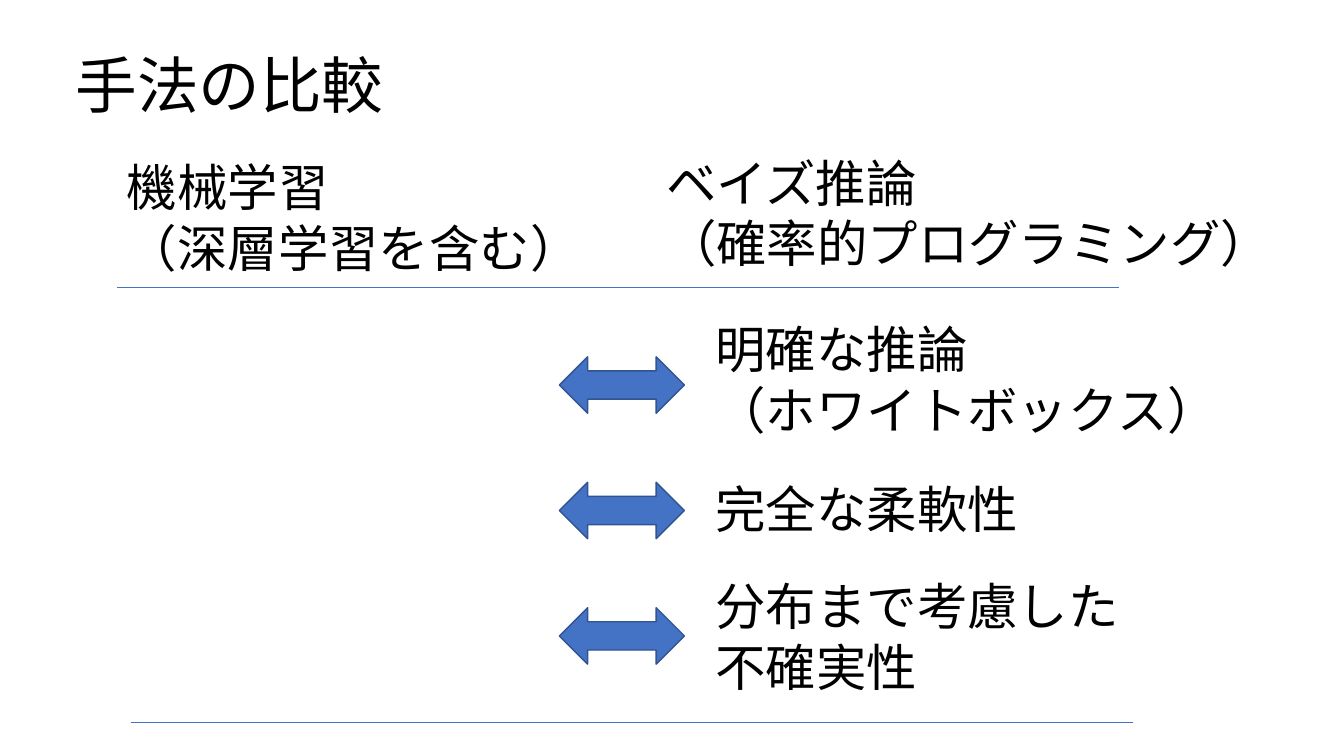
from dataclasses import dataclass

from lxml.etree import SubElement
from pptx import Presentation
from pptx.dml.color import RGBColor
from pptx.enum.shapes import MSO_CONNECTOR as Connector, MSO_SHAPE as Shape
from pptx.enum.text import MSO_ANCHOR as Anchor, MSO_AUTO_SIZE as AutoSize, PP_ALIGN as Align
from pptx.oxml.ns import qn
from pptx.slide import Slide
from pptx.text.text import TextFrame
from pptx.util import Pt

FONT = "Noto Sans CJK JP"
BLACK, BLUE, DARK_BLUE = "000000", "4472C4", "325491"

RULE_WIDTH = 715.7
ARROW_LEFT, ARROW_TOP, ARROW_PITCH = 399.6, 254.9, 89.6
ARROW_WIDTH, ARROW_HEIGHT = 89.3, 40.3
ARROW_COUNT = 3
POINT_LEFT = 504
ONE_LINE, TWO_LINES = 51.1, 94.3


@dataclass(frozen=True)
class Label:
    left: float
    top: float
    width: float
    height: float
    lines: tuple[str, ...]


@dataclass(frozen=True)
class Rule:
    left: float
    top: float


LABELS = (
    Label(83.5, 108, 342, TWO_LINES, ("機械学習", "（深層学習を含む）")),
    Label(468.7, 105.1, 450.7, TWO_LINES, ("ベイズ推論", "（確率的プログラミング）")),
    Label(POINT_LEFT, 223.9, 378, TWO_LINES, ("明確な推論", "（ホワイトボックス）")),
    Label(POINT_LEFT, 337.7, 232.6, ONE_LINE, ("完全な柔軟性",)),
    Label(POINT_LEFT, 407.5, 305.3, TWO_LINES, ("分布まで考慮した", "不確実性")),
)
RULES = (Rule(83.5, 205.2), Rule(93.6, 516.2))


def color(value: str) -> RGBColor:
    return RGBColor.from_string(value)


def write_lines(frame: TextFrame, lines: tuple[str, ...], size: float, spacing: float = 1) -> None:
    for index, line in enumerate(lines):
        para = frame.paragraphs[0] if index == 0 else frame.add_paragraph()
        para.alignment = Align.LEFT
        para.line_spacing = spacing
        span = para.add_run()
        span.text = line
        span.font.size = Pt(size)
        span.font.name = FONT
        span.font.color.rgb = color(BLACK)
        SubElement(span.font._element, qn("a:ea"), typeface=FONT)


def set_title(page: Slide, text: str) -> None:
    title = page.shapes.title
    title.left, title.top = Pt(46.8), Pt(10.8)
    title.width, title.height = Pt(828), Pt(104.4)
    frame = title.text_frame
    frame.word_wrap = True
    frame.auto_size = AutoSize.NONE
    frame.vertical_anchor = Anchor.MIDDLE
    write_lines(frame, (text,), 44, 0.9)


def add_label(page: Slide, label: Label) -> None:
    box = page.shapes.add_textbox(
        Pt(label.left), Pt(label.top), Pt(label.width), Pt(label.height)
    )
    box.text_frame.word_wrap = False
    box.text_frame.auto_size = AutoSize.SHAPE_TO_FIT_TEXT
    write_lines(box.text_frame, label.lines, 36)


def add_rule(page: Slide, rule: Rule) -> None:
    line = page.shapes.add_connector(
        Connector.STRAIGHT,
        Pt(rule.left), Pt(rule.top), Pt(rule.left + RULE_WIDTH), Pt(rule.top),
    )
    line.line.color.rgb = color(BLUE)
    line.line.width = Pt(0.5)
    SubElement(line._element.spPr, qn("a:effectLst"))


def add_arrow(page: Slide, top: float) -> None:
    arrow = page.shapes.add_shape(
        Shape.LEFT_RIGHT_ARROW,
        Pt(ARROW_LEFT), Pt(top), Pt(ARROW_WIDTH), Pt(ARROW_HEIGHT),
    )
    arrow.shadow.inherit = False
    arrow.fill.solid()
    arrow.fill.fore_color.rgb = color(BLUE)
    arrow.line.color.rgb = color(DARK_BLUE)
    arrow.line.width = Pt(1)


def main() -> None:
    deck = Presentation()
    deck.slide_width, deck.slide_height = Pt(960), Pt(540)
    page = deck.slides.add_slide(deck.slide_layouts[5])
    set_title(page, "手法の比較")
    for label in LABELS:
        add_label(page, label)
    for rule in RULES:
        add_rule(page, rule)
    for row in range(ARROW_COUNT):
        add_arrow(page, ARROW_TOP + row * ARROW_PITCH)
    deck.save("out.pptx")


if __name__ == "__main__":
    main()
